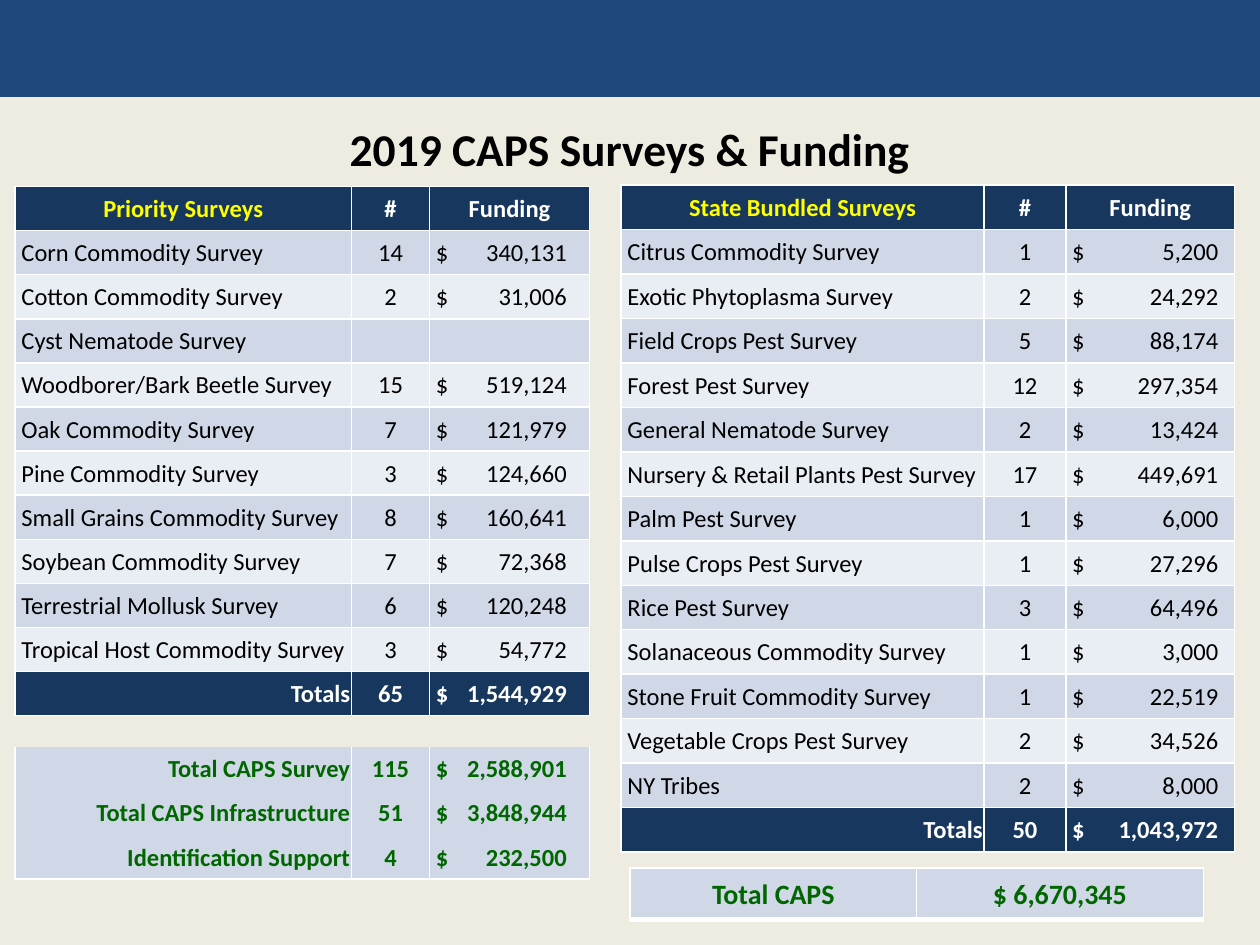
from lxml import etree
from pptx import Presentation
from pptx import util as u
from pptx.dml.color import RGBColor
from pptx.enum import shapes, text
from pptx.oxml.ns import qn

HUES = {"bar": "1F497D", "page": "EEECE1", "navy": "17375E", "odd": "D0D8E8", "even": "E9EDF4",
        "gold": "FFFF00", "white": "FFFFFF", "black": "000000", "green": "006600"}
LEFT, MID, RIGHT = text.PP_ALIGN.LEFT, text.PP_ALIGN.CENTER, text.PP_ALIGN.RIGHT
PLAIN = "{2D5ABB26-0587-4C30-8999-92F81FD0307C}"

priority = [
    ("Corn Commodity Survey", 14, 340131), ("Cotton Commodity Survey", 2, 31006),
    ("Cyst Nematode Survey", None, None), ("Woodborer/Bark Beetle Survey", 15, 519124),
    ("Oak Commodity Survey", 7, 121979), ("Pine Commodity Survey", 3, 124660),
    ("Small Grains Commodity Survey", 8, 160641), ("Soybean Commodity Survey", 7, 72368),
    ("Terrestrial Mollusk Survey", 6, 120248), ("Tropical Host Commodity Survey", 3, 54772),
]
bundled = [
    ("Citrus Commodity Survey", 1, 5200), ("Exotic Phytoplasma Survey", 2, 24292),
    ("Field Crops Pest Survey", 5, 88174), ("Forest Pest Survey", 12, 297354),
    ("General Nematode Survey", 2, 13424), ("Nursery & Retail Plants Pest Survey", 17, 449691),
    ("Palm Pest Survey", 1, 6000), ("Pulse Crops Pest Survey", 1, 27296),
    ("Rice Pest Survey", 3, 64496), ("Solanaceous Commodity Survey", 1, 3000),
    ("Stone Fruit Commodity Survey", 1, 22519), ("Vegetable Crops Pest Survey", 2, 34526),
    ("NY Tribes", 2, 8000),
]
sums = [("Total CAPS Survey", 115, 2588901), ("Total CAPS Infrastructure", 51, 3848944),
        ("Identification Support", 4, 232500)]

deck = Presentation()
deck.slide_width, deck.slide_height = u.Inches(10), u.Inches(7.5)
unit = deck.slide_width // 100
slide = deck.slides.add_slide(deck.slide_layouts[5])
slide.background.fill.solid()
slide.background.fill.fore_color.rgb = RGBColor.from_string(HUES["page"])


def grid(left, top, cols, rows):
    box = [int(n * unit) for n in (left, top, sum(cols), sum(rows))]
    table = slide.shapes.add_table(len(rows), len(cols), *box).table
    table.first_row = table.horz_banding = False
    table._tbl.tblPr.find(qn("a:tableStyleId")).text = PLAIN
    for col, wide in zip(table.columns, cols):
        col.width = int(wide * unit)
    for row, high in zip(table.rows, rows):
        row.height = int(high * unit)
    return table


def put(cell, words, ink, fill, bold, align, size=14, pad=0.1, tab=None, edges="LTRB", base=1):
    cell.vertical_anchor = text.MSO_ANCHOR.MIDDLE
    cell.margin_left, cell.margin_right = int(pad * unit), int(0.1 * unit)
    cell.margin_top, cell.margin_bottom = int(0.1 * unit), 0
    para = cell.text_frame.paragraphs[0]
    para.text = words
    para.alignment = align
    if tab:
        tabs = etree.SubElement(para._p.get_or_add_pPr(), qn("a:tabLst"))
        etree.SubElement(tabs, qn("a:tab"), pos=str(int(tab * unit)), algn="r")
    for run in para.runs:
        run.font.name, run.font.size, run.font.bold = "Calibri", u.Pt(size), bold
        run.font.color.rgb = RGBColor.from_string(HUES[ink])
    if not words:
        etree.SubElement(para._p, qn("a:endParaRPr"), sz=str(size * 100))
    props = cell._tc.get_or_add_tcPr()
    for edge in edges:
        wide = base if edge == "B" else 1
        line = etree.SubElement(props, qn("a:ln" + edge), w=str(u.Pt(wide)))
        etree.SubElement(etree.SubElement(line, qn("a:solidFill")), qn("a:srgbClr"), val=HUES["white"])
    if fill:
        cell.fill.solid()
        cell.fill.fore_color.rgb = RGBColor.from_string(HUES[fill])
    else:
        cell.fill.background()


bar = slide.shapes.add_shape(shapes.MSO_SHAPE.RECTANGLE, 0, 0, deck.slide_width, int(7.7 * unit))
bar.shadow.inherit = False
bar.fill.solid()
bar.fill.fore_color.rgb = RGBColor.from_string(HUES["bar"])
bar.line.fill.background()

title = slide.shapes.title
title.left, title.top, title.width, title.height = [int(n * unit) for n in (5, 7.9, 90, 7.8)]
title.text_frame.text = "2019 CAPS Surveys & Funding"
title.text_frame.vertical_anchor = text.MSO_ANCHOR.MIDDLE
title.text_frame.paragraphs[0].alignment = MID
run = title.text_frame.paragraphs[0].runs[0]
run.font.size, run.font.bold = u.Pt(26), True
run.font.color.rgb = RGBColor.from_string(HUES["black"])
glow = etree.Element(qn("a:effectLst"))
cast = etree.SubElement(glow, qn("a:outerShdw"), blurRad="38100", dist="38100", dir="2700000")
shade = etree.SubElement(cast, qn("a:srgbClr"), val=HUES["black"])
etree.SubElement(shade, qn("a:alpha"), val="43000")
run._r.rPr.find(qn("a:solidFill")).addnext(glow)
run.font.name = "Calibri"

plans = [
    ("Priority Surveys", priority, ("Totals", 65, 1544929), sums,
     1.2, 14.8, (26.7, 6.2, 12.7), 3.5, 10.4),
    ("State Bundled Surveys", bundled, ("Totals", 50, 1043972), [],
     49.3, 14.7, (28.8, 6.5, 13.4), 3.53, 11.6),
]
for head, items, total, extra, left, top, cols, high, tab in plans:
    rows = [high] * (len(items) + 2)
    if extra:
        rows += [2.45] + [high] * len(extra)
    table = grid(left, top, cols, rows)
    for c, words in enumerate((head, "#", "Funding")):
        put(table.cell(0, c), words, "white" if c else "gold", "navy", True, MID)
    lines = [(item, "black", "even" if i % 2 else "odd", False, LEFT, "LTRB")
             for i, item in enumerate(items)]
    lines.append((total, "white", "navy", True, RIGHT, "LTR" if extra else "LTRB"))
    if extra:
        lines.append((("", None, None), "black", None, False, LEFT, ""))
    for item in extra:
        lines.append((item, "green", "odd", True, RIGHT, "LRB" if item == extra[-1] else "LR"))
    for r, (item, ink, fill, bold, align, edges) in enumerate(lines, 1):
        name, count, cash = item
        put(table.cell(r, 0), name, ink, fill, bold, align, pad=0.1 if bold else 0.5, edges=edges)
        put(table.cell(r, 1), str(count or ""), ink, fill, bold, MID, edges=edges)
        put(table.cell(r, 2), f"$\t{cash:,}" if cash else "", ink, fill, bold, LEFT,
            pad=0.5, tab=tab, edges=edges)

grand = grid(50, 68.9, (22.75, 22.75), (4.1,))
for c, words in enumerate(("Total CAPS", "$ 6,670,345")):
    put(grand.cell(0, c), words, "green", "odd", True, MID, size=16, base=3)

deck.save("out.pptx")
